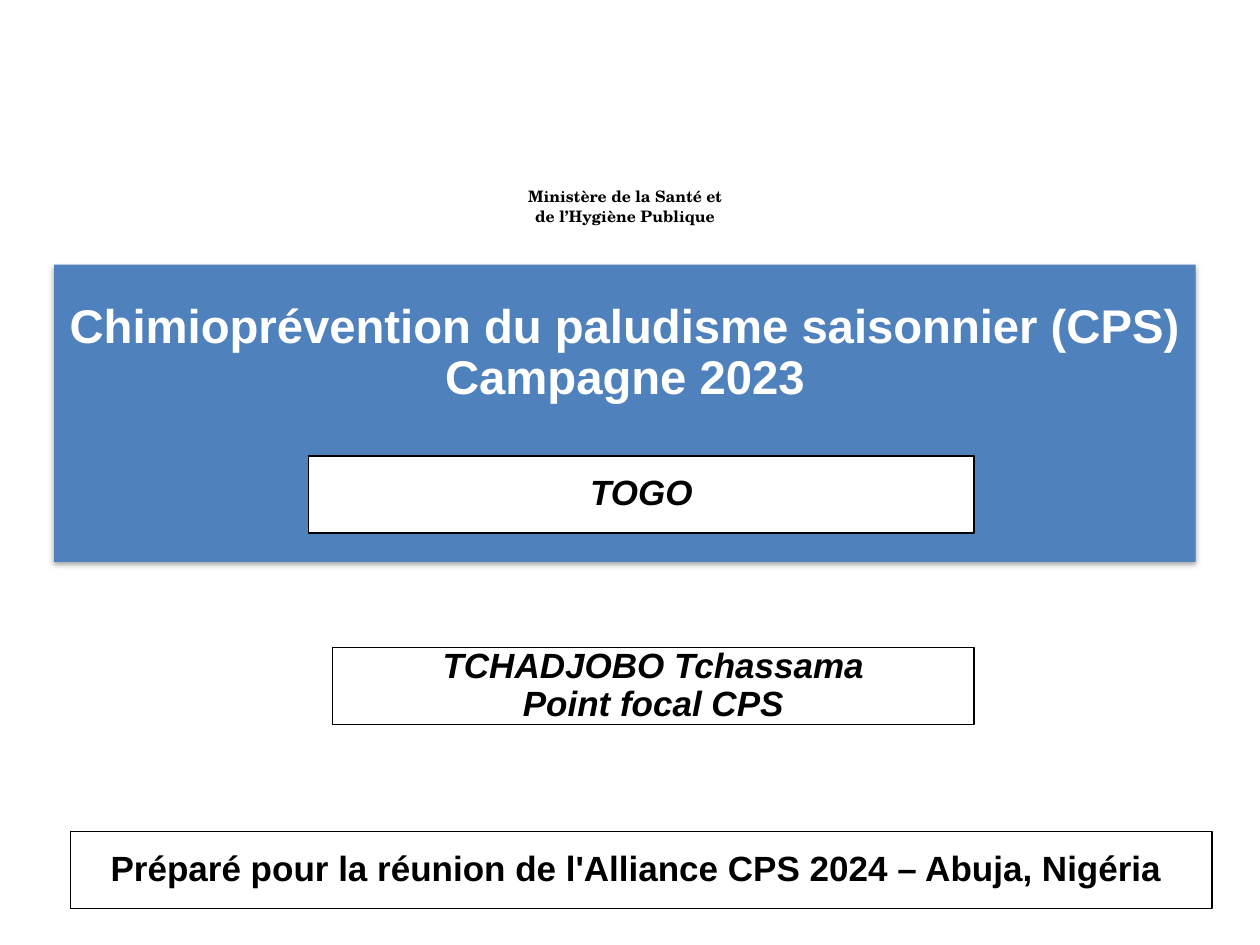
from dataclasses import dataclass

from lxml.etree import SubElement
from pptx import Presentation
from pptx.dml.color import RGBColor as RGB
from pptx.enum.shapes import MSO_SHAPE as Preset
from pptx.enum.text import MSO_ANCHOR as Anchor, MSO_AUTO_SIZE as AutoSize, PP_ALIGN as Align
from pptx.oxml.ns import qn
from pptx.util import Inches, Pt


@dataclass(frozen=True)
class Theme:
    blue: RGB = RGB(0x4F, 0x81, 0xBD)
    white: RGB = RGB(255, 255, 255)
    black: RGB = RGB(0, 0, 0)
    sans: str = "Arial"
    serif: str = "TeX Gyre Schola"
    title_size: float = 27
    label_size: float = 20
    ministry_size: float = 9
    border: float = 0.75
    inset: float = 0.1


class CoverSlide:
    """Places elements on a grid of 100 columns by 75 rows."""

    COLUMNS, ROWS = 100, 75

    def __init__(self, deck, theme):
        self.theme = theme
        self.column = deck.slide_width / self.COLUMNS
        self.row = deck.slide_height / self.ROWS
        self.slide = deck.slides.add_slide(deck.slide_layouts[5])

    def cells(self, left, top, width, height):
        return (round(left * self.column), round(top * self.row),
                round(width * self.column), round(height * self.row))

    def set_lines(self, shape, lines, size, color, font=None, italic=False,
                  spacing=0.9, anchor=Anchor.MIDDLE):
        frame = shape.text_frame
        frame.word_wrap = True
        frame.auto_size = AutoSize.NONE
        frame.vertical_anchor = anchor
        frame.margin_left = frame.margin_right = Inches(self.theme.inset)
        frame.margin_top = frame.margin_bottom = Inches(self.theme.inset / 2)
        for index, line in enumerate(lines):
            paragraph = frame.add_paragraph() if index else frame.paragraphs[0]
            paragraph.alignment = Align.CENTER
            paragraph.line_spacing = spacing
            paragraph.space_before = Pt(0)
            run = paragraph.add_run()
            run.text = line
            run.font.name = font or self.theme.sans
            run.font.size = Pt(size)
            run.font.bold = True
            run.font.italic = italic
            run.font.color.rgb = color

    def cast_shadow(self, shape):
        effects = SubElement(shape.element.spPr, qn("a:effectLst"))
        shadow = SubElement(effects, qn("a:outerShdw"), blurRad=str(Pt(3.1)),
                            dist=str(Pt(1.8)), dir="5400000", rotWithShape="0")
        color = SubElement(shadow, qn("a:srgbClr"), val=str(self.theme.black))
        SubElement(color, qn("a:alpha"), val="35000")

    def title_banner(self, cells, lines):
        title = self.slide.shapes.title
        title.left, title.top, title.width, title.height = self.cells(*cells)
        title.fill.solid()
        title.fill.fore_color.rgb = self.theme.blue
        title.line.fill.background()
        self.cast_shadow(title)
        self.set_lines(title, lines, self.theme.title_size, self.theme.white,
                       anchor=Anchor.TOP)
        title.text_frame.margin_top = Inches(0.3)

    def label(self, cells, lines, italic=False):
        box = self.slide.shapes.add_shape(Preset.RECTANGLE, *self.cells(*cells))
        box.shadow.inherit = False
        box.fill.solid()
        box.fill.fore_color.rgb = self.theme.white
        box.line.color.rgb = self.theme.black
        box.line.width = Pt(self.theme.border)
        self.set_lines(box, lines, self.theme.label_size, self.theme.black, italic=italic)

    def ministry(self, cells, name):
        box = self.slide.shapes.add_textbox(*self.cells(*cells))
        self.set_lines(box, [name], self.theme.ministry_size, self.theme.black,
                       font=self.theme.serif, spacing=1.07)


def main():
    deck = Presentation()
    deck.slide_width, deck.slide_height = Inches(10), Inches(7.5)
    cover = CoverSlide(deck, Theme())
    label_height = 6.1
    banner_width = 90.6

    cover.title_banner((4.3, 21, banner_width, 23.6),
                       ["Chimioprévention du paludisme saisonnier (CPS)", "Campagne 2023"])
    cover.label((24.5, 36.2, 52.8, label_height), ["TOGO"], italic=True)
    cover.label((26.4, 51.4, 50.9, label_height),
                ["TCHADJOBO Tchassama", "Point focal CPS"], italic=True)
    cover.label((5.6, 66, banner_width, label_height),
                ["Préparé pour la réunion de l'Alliance CPS 2024 – Abuja, Nigéria "])
    cover.ministry((40.6, 14.1, 18, 4.4), "Ministère de la Santé et de l’Hygiène Publique")
    deck.save("out.pptx")


if __name__ == "__main__":
    main()
